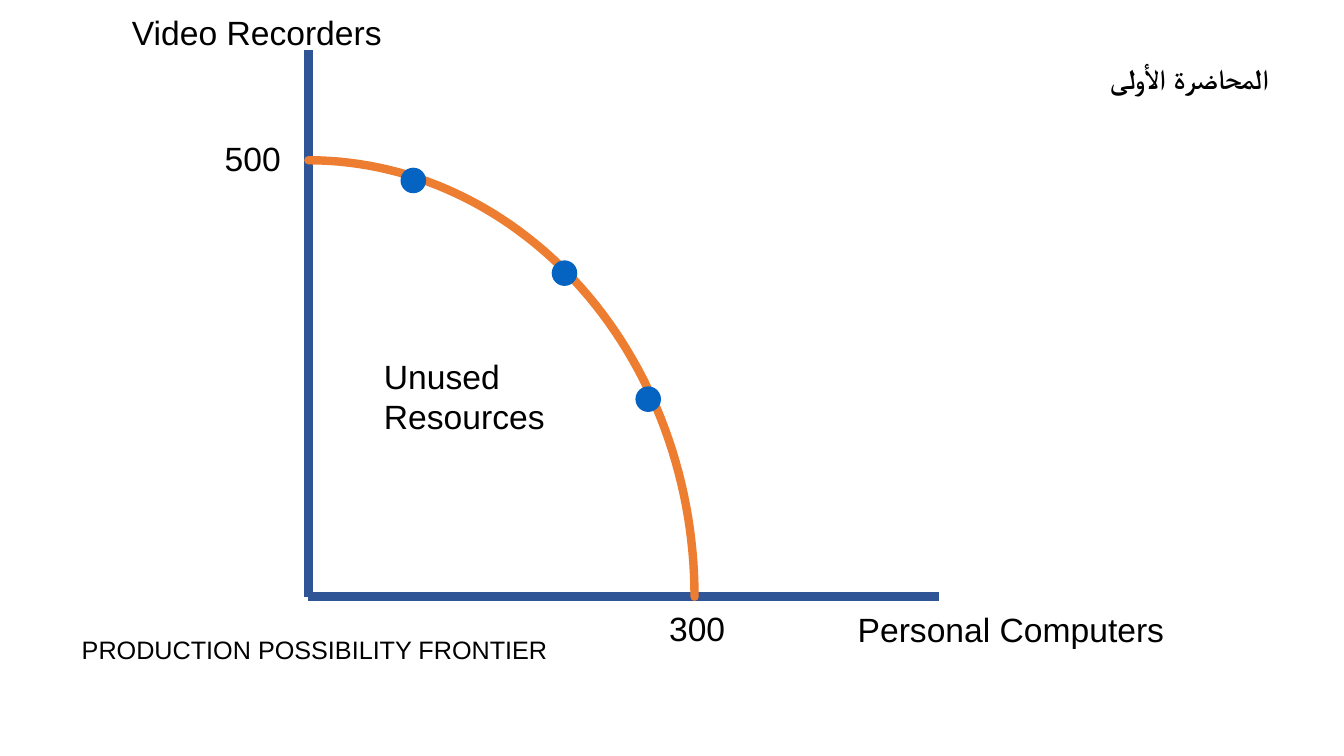
import math
from lxml import etree
from pptx import Presentation
from pptx.dml.color import RGBColor
from pptx.enum.shapes import MSO_CONNECTOR, MSO_SHAPE
from pptx.enum.text import MSO_ANCHOR, MSO_AUTO_SIZE, PP_ALIGN
from pptx.oxml.ns import qn
from pptx.util import Inches, Pt

STRAIGHT = MSO_CONNECTOR.STRAIGHT
OVAL = MSO_SHAPE.OVAL
TOP = MSO_ANCHOR.TOP
LEFT = PP_ALIGN.LEFT
GROW = MSO_AUTO_SIZE.SHAPE_TO_FIT_TEXT

W, H = Inches(13.33), Inches(7.5)
FONT = "Arial"
BLACK, AXIS, CURVE, DOT = "000000", "2F5597", "ED7D31", "0563C1"

ORIGIN_X, ORIGIN_Y = 22.95, 78.93
AXIS_TOP, AXIS_RIGHT = 6.67, 69.83
MAX_VIDEO, MAX_PC = 21.2, 51.68
CURVE_STEPS = 60


def x(share):
    return round(W * share / 100)


def y(share):
    return round(H * share / 100)


def paint(fmt, color):
    fmt.solid()
    fmt.fore_color.rgb = RGBColor.from_string(color)


def stroke(shape, color, width):
    paint(shape.line.fill, color)
    shape.line.width = Pt(width)


def fill_text(tf, lines, size, bold=False, wrap=False):
    tf.word_wrap = wrap
    tf.auto_size = GROW
    tf.vertical_anchor = TOP
    for i, line in enumerate(lines):
        p = tf.add_paragraph() if i else tf.paragraphs[0]
        p.alignment = LEFT
        r = p.add_run()
        r.text = line
        r.font.name = FONT
        r.font.size = Pt(size)
        r.font.bold = bold
        paint(r.font.fill, BLACK)


def add_label(s, left, top, width, height, lines, size=24, bold=False, wrap=False):
    box = s.shapes.add_textbox(x(left), y(top), x(width), y(height))
    fill_text(box.text_frame, lines, size, bold, wrap)


def set_title(s, left, top, width, height, text):
    title = s.shapes.title
    title.left, title.top = x(left), y(top)
    title.width, title.height = x(width), y(height)
    fill_text(title.text_frame, [text], 18, wrap=True)
    title.text_frame.auto_size = MSO_AUTO_SIZE.NONE


def add_axis(s, x1, y1, x2, y2):
    axis = s.shapes.add_connector(STRAIGHT, x(x1), y(y1), x(x2), y(y2))
    stroke(axis, AXIS, 6)
    etree.SubElement(axis._element.spPr, qn("a:effectLst"))


def add_frontier(s):
    rx, ry = x(MAX_PC - ORIGIN_X), y(ORIGIN_Y - MAX_VIDEO)
    angles = [math.pi / 2 * i / CURVE_STEPS for i in range(CURVE_STEPS + 1)]
    points = [(round(x(ORIGIN_X) + rx * math.sin(a)),
               round(y(ORIGIN_Y) - ry * math.cos(a))) for a in angles]
    builder = s.shapes.build_freeform(*points[0])
    builder.add_line_segments(points[1:], close=False)
    curve = builder.convert_to_shape()
    curve.shadow.inherit = False
    curve.fill.background()
    stroke(curve, CURVE, 6)
    ln = curve.line._get_or_add_ln()
    ln.set("cap", "rnd")
    etree.SubElement(ln, qn("a:round"))


def add_dot(s, cx, cy):
    d = x(1.8)
    dot = s.shapes.add_shape(OVAL, x(cx) - d // 2, y(cy) - d // 2, d, d)
    dot.shadow.inherit = False
    paint(dot.fill, DOT)
    stroke(dot, DOT, 1)


def main():
    prs = Presentation()
    prs.slide_width, prs.slide_height = W, H
    s = prs.slides.add_slide(prs.slide_layouts[5])

    add_axis(s, ORIGIN_X, AXIS_TOP, ORIGIN_X, ORIGIN_Y)
    add_axis(s, ORIGIN_X, ORIGIN_Y, AXIS_RIGHT, ORIGIN_Y)
    add_frontier(s)

    add_label(s, 9.08, 0.93, 21.38, 6.67, ["Video Recorders"])
    add_label(s, 63.08, 79.87, 25.95, 6.67, ["Personal Computers"], wrap=True)
    add_label(s, 15.98, 17.6, 5.7, 6.67, ["500"])
    add_label(s, 49.05, 79.73, 5.7, 6.67, ["300"])

    for cx, cy in [(30.75, 23.87), (42, 36.13), (48.23, 52.8)]:
        add_dot(s, cx, cy)

    add_label(s, 27.83, 46.4, 14.25, 12, ["Unused", "Resources"])
    set_title(s, 5.33, 83.2, 71.25, 9.33, "PRODUCTION POSSIBILITY FRONTIER")
    add_label(s, 81.83, 7.47, 14.1, 5.87, ["المحاضرة الأولى"], 20, bold=True, wrap=True)

    prs.save("out.pptx")


if __name__ == "__main__":
    main()
